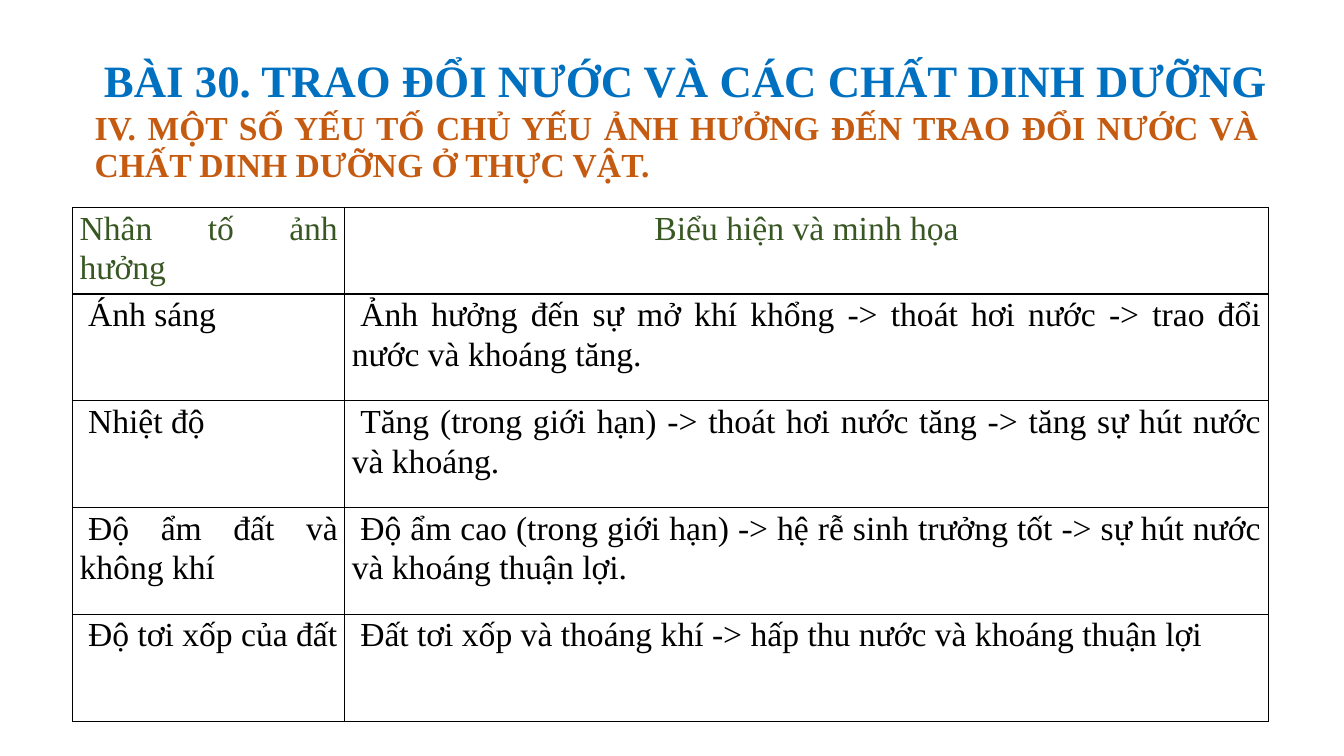
from lxml.etree import SubElement
from pptx import Presentation
from pptx.dml.color import RGBColor
from pptx.enum.text import MSO_ANCHOR, MSO_AUTO_SIZE, PP_ALIGN
from pptx.oxml.ns import qn
from pptx.util import Pt

PX = 9144  # 100 px to the inch
FONT = "Times New Roman"
BLUE, ORANGE, GREEN, BLACK = "0070C0", "C55A11", "385723", "000000"

TITLE = "BÀI 30. TRAO ĐỔI NƯỚC VÀ CÁC CHẤT DINH DƯỠNG"
SUBTITLE = ("IV. MỘT SỐ YẾU TỐ CHỦ YẾU ẢNH HƯỞNG ĐẾN TRAO ĐỔI NƯỚC "
            "VÀ CHẤT DINH DƯỠNG Ở THỰC VẬT.")
FACTORS = [
    ("Nhân tố ảnh hưởng", "Biểu hiện và minh họa"),
    ("Ánh sáng", "Ảnh hưởng đến sự mở khí khổng -> thoát hơi nước -> "
                 "trao đổi nước và khoáng tăng."),
    ("Nhiệt độ", "Tăng (trong giới hạn) -> thoát hơi nước tăng -> "
                 "tăng sự hút nước và khoáng."),
    ("Độ ẩm đất và không khí", "Độ ẩm cao (trong giới hạn) -> hệ rễ sinh trưởng tốt -> "
                               "sự hút nước và khoáng thuận lợi."),
    ("Độ tơi xốp của đất", "Đất tơi xốp và thoáng khí -> hấp thu nước và khoáng thuận lợi"),
]
COLUMN_WIDTHS = (270, 916)
HEADER_HEIGHT, ROW_HEIGHT = 78, 106


def px(length):
    return int(length * PX)


def color(value):
    return RGBColor.from_string(value)


def write(frame, text, size, ink, align, line=0.9, before=0, after=0, bold=False):
    """Write one formatted paragraph into a text frame and return it."""
    frame.word_wrap = True
    para = frame.paragraphs[0]
    para.alignment = align
    para.line_spacing = line
    para.space_before, para.space_after = Pt(before), Pt(after)
    span = para.add_run()
    span.text = text
    span.font.name, span.font.size, span.font.bold = FONT, Pt(size), bold
    span.font.color.rgb = color(ink)
    return para


def add_title(slide, left, top, width, height):
    title = slide.shapes.title
    title.left, title.top = px(left), px(top)
    title.width, title.height = px(width), px(height)
    frame = title.text_frame
    frame.auto_size = MSO_AUTO_SIZE.NONE
    frame.vertical_anchor = MSO_ANCHOR.BOTTOM
    write(frame, TITLE, 32, BLUE, PP_ALIGN.CENTER, bold=True)


def add_subtitle(slide, left, top, width, height):
    box = slide.shapes.add_textbox(px(left), px(top), px(width), px(height))
    write(box.text_frame, SUBTITLE, 24, ORANGE, PP_ALIGN.JUSTIFY, before=10, bold=True)


def add_borders(cell):
    properties = cell._tc.get_or_add_tcPr()
    for side in ("a:lnL", "a:lnR", "a:lnT", "a:lnB"):
        border = SubElement(properties, qn(side), w=str(Pt(1)))
        fill = SubElement(border, qn("a:solidFill"))
        SubElement(fill, qn("a:srgbClr"), val=BLACK)


def fill_cell(cell, text, is_header, align):
    add_borders(cell)
    cell.fill.background()
    cell.margin_left = cell.margin_right = px(7)
    cell.margin_top = cell.margin_bottom = 0
    para = write(cell.text_frame, text, 24, GREEN if is_header else BLACK, align,
                 line=1.07, before=6, after=6)
    if not is_header:
        para._p.get_or_add_pPr().set("indent", str(Pt(6)))


def add_factor_table(slide, left, top):
    height = HEADER_HEIGHT + ROW_HEIGHT * (len(FACTORS) - 1)
    table = slide.shapes.add_table(len(FACTORS), len(COLUMN_WIDTHS), px(left), px(top),
                                   px(sum(COLUMN_WIDTHS)), px(height)).table
    table.first_row = table.horz_banding = False
    for column, width in zip(table.columns, COLUMN_WIDTHS):
        column.width = px(width)
    for row, texts in enumerate(FACTORS):
        is_header = row == 0
        table.rows[row].height = px(HEADER_HEIGHT if is_header else ROW_HEIGHT)
        for column, text in enumerate(texts):
            centred = is_header and column == 1
            fill_cell(table.cell(row, column), text, is_header,
                      PP_ALIGN.CENTER if centred else PP_ALIGN.JUSTIFY)


def main():
    deck = Presentation()
    deck.slide_width, deck.slide_height = px(1333), px(750)
    slide = deck.slides.add_slide(deck.slide_layouts[5])
    add_title(slide, 84, 40, 1192, 71)
    add_subtitle(slide, 84, 106, 1174, 97)
    add_factor_table(slide, 72, 206)
    deck.save("out.pptx")


if __name__ == "__main__":
    main()
